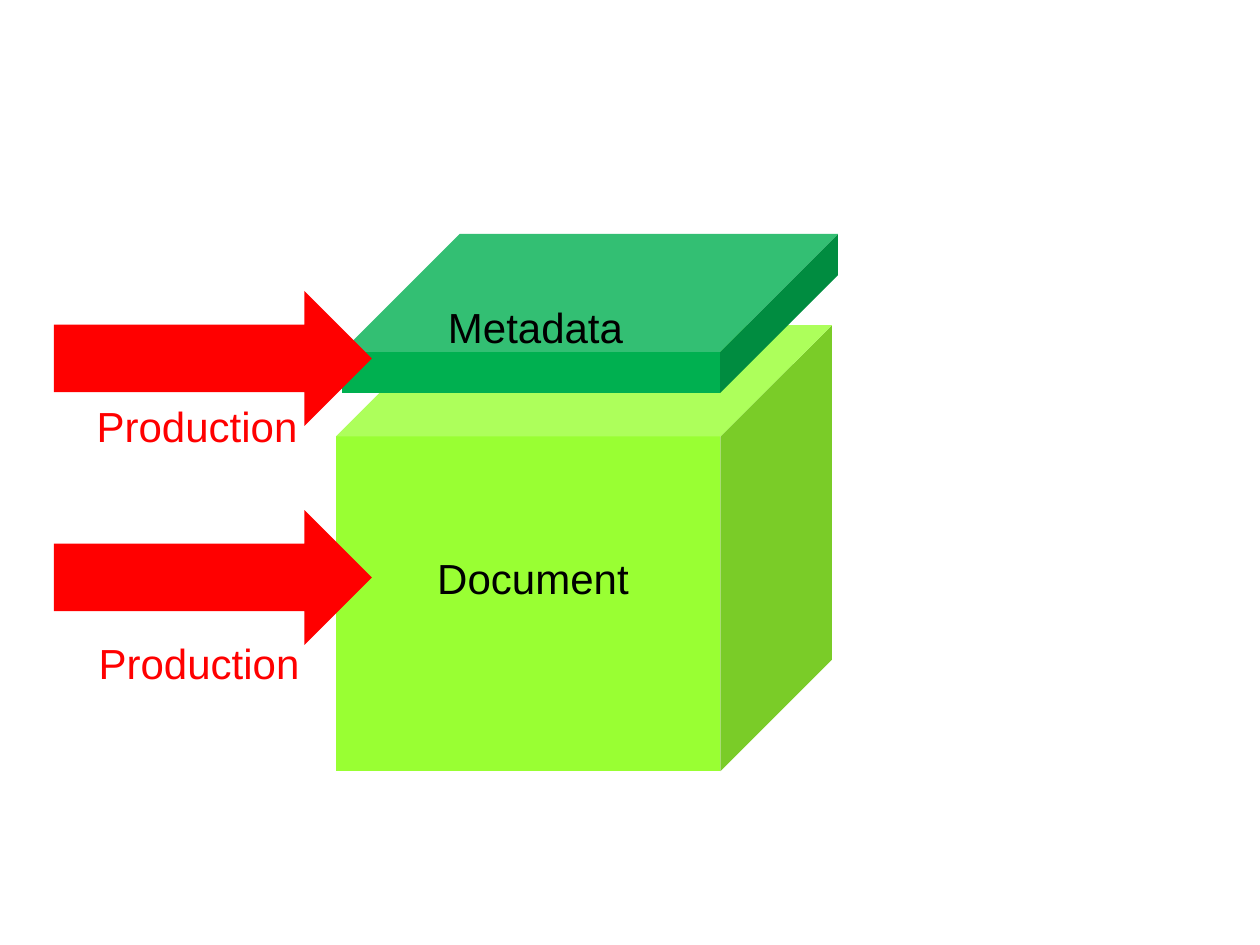
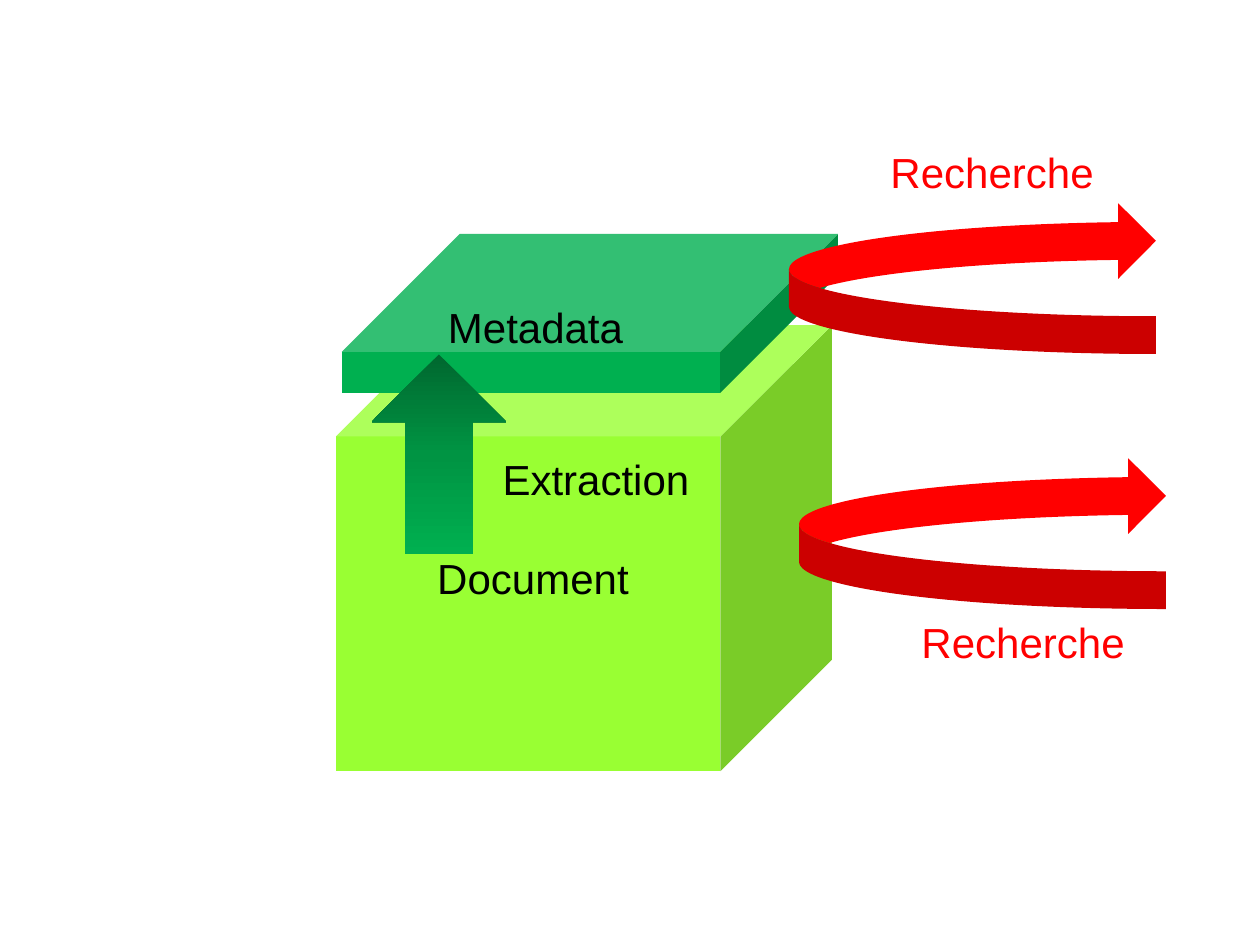
from copy import deepcopy
from dataclasses import dataclass

from pptx import Presentation
from pptx import util as u
from pptx.dml.color import RGBColor
from pptx.enum import shapes, text
from pptx.oxml.ns import qn

Preset = shapes.MSO_SHAPE


@dataclass(frozen=True)
class Theme:
    font: str = "Arial"
    label_size: int = 24
    ink: str = "000000"
    action: str = "FF0000"
    document: str = "99FF33"
    metadata: str = "00B050"
    extraction: tuple = ((0, "00682F"), (0.5, "009443"), (1, "00B050"))


class Deck:
    SCALE = u.Inches(1) / 126

    def __init__(self, theme, width, height):
        self.theme = theme
        self.prs = Presentation()
        self.prs.slide_width, self.prs.slide_height = self.emu(width, height)
        self.canvas = None

    def emu(self, *lengths):
        return [u.Emu(round(length * self.SCALE)) for length in lengths]

    def new_slide(self):
        self.canvas = self.prs.slides.add_slide(self.prs.slide_layouts[6]).shapes

    def solid(self, preset, box, color, rotation=0, canvas=None):
        body = (canvas or self.canvas).add_shape(preset, *self.emu(*box))
        body.shadow.inherit = False
        body.line.fill.background()
        body.fill.solid()
        body.fill.fore_color.rgb = RGBColor.from_string(color)
        body.rotation = rotation
        return body

    def gradient_arrow(self, box, stops, rotation):
        arrow = self.solid(Preset.RIGHT_ARROW, box, stops[0][1], rotation)
        arrow.fill.gradient()
        arrow.fill.gradient_angle = 180
        stop_list = next(arrow.fill._xPr.iter(qn("a:gsLst")))
        stop_list.insert(1, deepcopy(stop_list[0]))
        for stop, (position, color) in zip(arrow.fill.gradient_stops, stops):
            stop.position = position
            stop.color.rgb = RGBColor.from_string(color)

    def label(self, wording, box, color, canvas=None):
        frame = (canvas or self.canvas).add_textbox(*self.emu(*box)).text_frame
        frame.word_wrap = True
        frame.auto_size = text.MSO_AUTO_SIZE.SHAPE_TO_FIT_TEXT
        paragraph = frame.paragraphs[0]
        paragraph.text = wording
        paragraph.alignment = text.PP_ALIGN.CENTER
        paragraph.font.name = self.theme.font
        paragraph.font.size = u.Pt(self.theme.label_size)
        paragraph.font.color.rgb = RGBColor.from_string(color)

    def block(self, wording, cube_box, label_box, color, depth=0.25):
        group = self.canvas.add_group_shape().shapes
        cube = self.solid(Preset.CUBE, cube_box, color, canvas=group)
        cube.adjustments[0] = depth
        self.label(wording, label_box, self.theme.ink, group)

    def archive(self):
        self.block("Document", (336, 325, 496, 446), (267, 546, 532, 63),
                   self.theme.document)
        self.block("Metadata", (342, 234, 496, 159), (409, 295, 253, 63),
                   self.theme.metadata, 0.741)


def production_slide(deck):
    deck.new_slide()
    deck.archive()
    for arrow_top, label_left, label_top in ((510, 6, 631), (291, 4, 394)):
        deck.solid(Preset.RIGHT_ARROW, (54, arrow_top, 318, 135), deck.theme.action)
        deck.label("Production", (label_left, label_top, 386, 63), deck.theme.action)


def search_slide(deck):
    deck.new_slide()
    deck.archive()
    deck.gradient_arrow((339, 387, 200, 135), deck.theme.extraction, 270)
    deck.label("Extraction", (403, 447, 386, 63), deck.theme.ink)
    for arrow_left, arrow_top, label_left, label_top in (
            (799, 458, 830, 610), (789, 203, 799, 140)):
        deck.solid(Preset.CURVED_LEFT_ARROW, (arrow_left, arrow_top, 367, 151),
                   deck.theme.action, 180)
        deck.label("Recherche", (label_left, label_top, 386, 63), deck.theme.action)


def main():
    deck = Deck(Theme(), 1260, 945)
    production_slide(deck)
    search_slide(deck)
    deck.prs.save("out.pptx")


if __name__ == "__main__":
    main()
